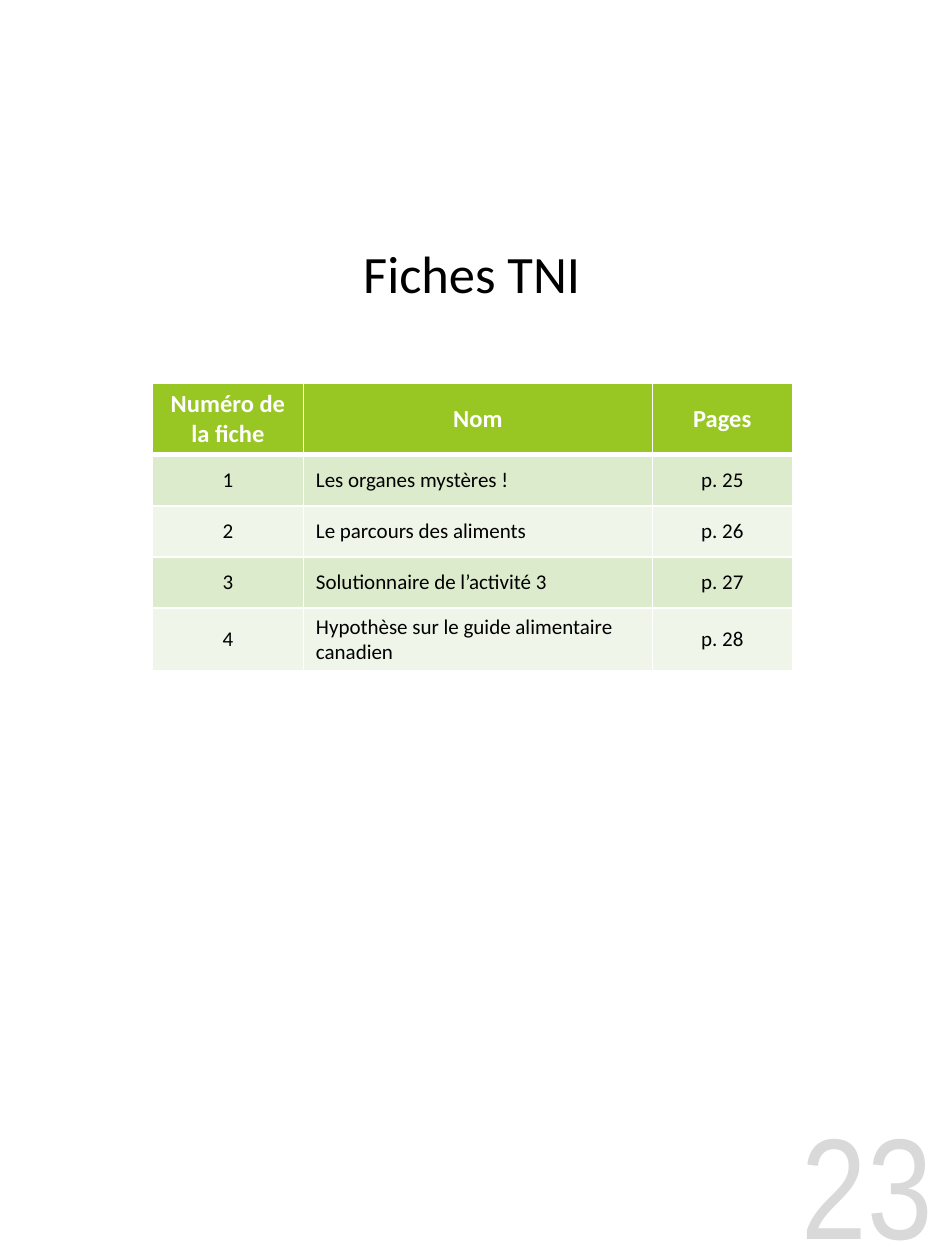
from lxml import etree
from pptx import Presentation
from pptx.dml.color import RGBColor
from pptx.enum.text import MSO_ANCHOR, PP_ALIGN
from pptx.oxml.ns import qn
from pptx.util import Pt

LEFT, CENTER, RIGHT = PP_ALIGN.LEFT, PP_ALIGN.CENTER, PP_ALIGN.RIGHT
MIDDLE = MSO_ANCHOR.MIDDLE

WHITE, BLACK, GREY = "FFFFFF", "000000", "D9D9D9"
GREEN = "98C723"
BANDS = ("DDEBCD", "EFF5E8")

HEADER = ("Numéro de\nla fiche", "Nom", "Pages")
SHEETS = (
    ("1", "Les organes mystères !", "p. 25"),
    ("2", "Le parcours des aliments", "p. 26"),
    ("3", "Solutionnaire de l’activité 3", "p. 27"),
    ("4", "Hypothèse sur le guide alimentaire canadien", "p. 28"),
)


def color(value):
    return RGBColor.from_string(value)


class SheetIndex:
    """Holds the style and the current slide."""

    font = "Calibri"
    column_widths = (86.2, 199.4, 80)
    column_aligns = (CENTER, LEFT, CENTER)
    row_height = 29.2

    def __init__(self, page):
        self.page = page

    def fill_text(self, frame, text, size, ink, align, font=None, bold=False):
        frame.text = text
        for para in frame.paragraphs:
            para.alignment = align
            para.font.name = font or self.font
            para.font.size = Pt(size)
            para.font.bold = bold
            para.font.color.rgb = color(ink)

    def text(self, left, top, width, height, text, size, ink, align, font=None):
        box = self.page.shapes.add_textbox(Pt(left), Pt(top), Pt(width), Pt(height))
        box.text_frame.word_wrap = True
        box.text_frame.vertical_anchor = MIDDLE
        self.fill_text(box.text_frame, text, size, ink, align, font)

    def border(self, cell, bottom, top):
        """Draw white cell borders, with the given top and bottom widths."""
        properties = cell._tc.get_or_add_tcPr()
        sides = (("a:lnL", 1), ("a:lnR", 1), ("a:lnT", top), ("a:lnB", bottom))
        for index, (tag, width) in enumerate(sides):
            line = etree.Element(qn(tag), w=str(Pt(width)))
            fill = etree.SubElement(line, qn("a:solidFill"))
            etree.SubElement(fill, qn("a:srgbClr"), val=WHITE)
            properties.insert(index, line)

    def cell(self, cell, text, size, ink, fill, align, bold, bottom, top):
        cell.vertical_anchor = MIDDLE
        cell.fill.solid()
        cell.fill.fore_color.rgb = color(fill)
        self.fill_text(cell.text_frame, text, size, ink, align, bold=bold)
        self.border(cell, bottom, top)

    def table(self, left, top, height, header, rows):
        frame = self.page.shapes.add_table(
            len(rows) + 1, len(header), Pt(left), Pt(top),
            Pt(sum(self.column_widths)), Pt(height))
        table = frame.table
        for column, width in zip(table.columns, self.column_widths):
            column.width = Pt(width)
        for row in table.rows:
            row.height = Pt(self.row_height)
        frame.height = Pt(height)  # two-line rows grow to fill this
        for index, text in enumerate(header):
            self.cell(table.cell(0, index), text, 14, WHITE, GREEN, CENTER, True, 3, 1)
        for number, row in enumerate(rows):
            for index, text in enumerate(row):
                self.cell(table.cell(number + 1, index), text, 12, BLACK,
                          BANDS[number % 2], self.column_aligns[index], False,
                          1, 1 if number else 3)


def main():
    deck = Presentation()
    deck.slide_width, deck.slide_height = Pt(540), Pt(720)
    sheet = SheetIndex(deck.slides.add_slide(deck.slide_layouts[6]))
    sheet.text(417, 631, 123, 89, "23", 82, GREY, RIGHT, "Arial Narrow")
    sheet.table(87.2, 219, 164.2, HEADER, SHEETS)
    sheet.text(101.5, 121.7, 336.2, 68.4, "Fiches TNI", 30, BLACK, CENTER)
    deck.save("out.pptx")


if __name__ == "__main__":
    main()
